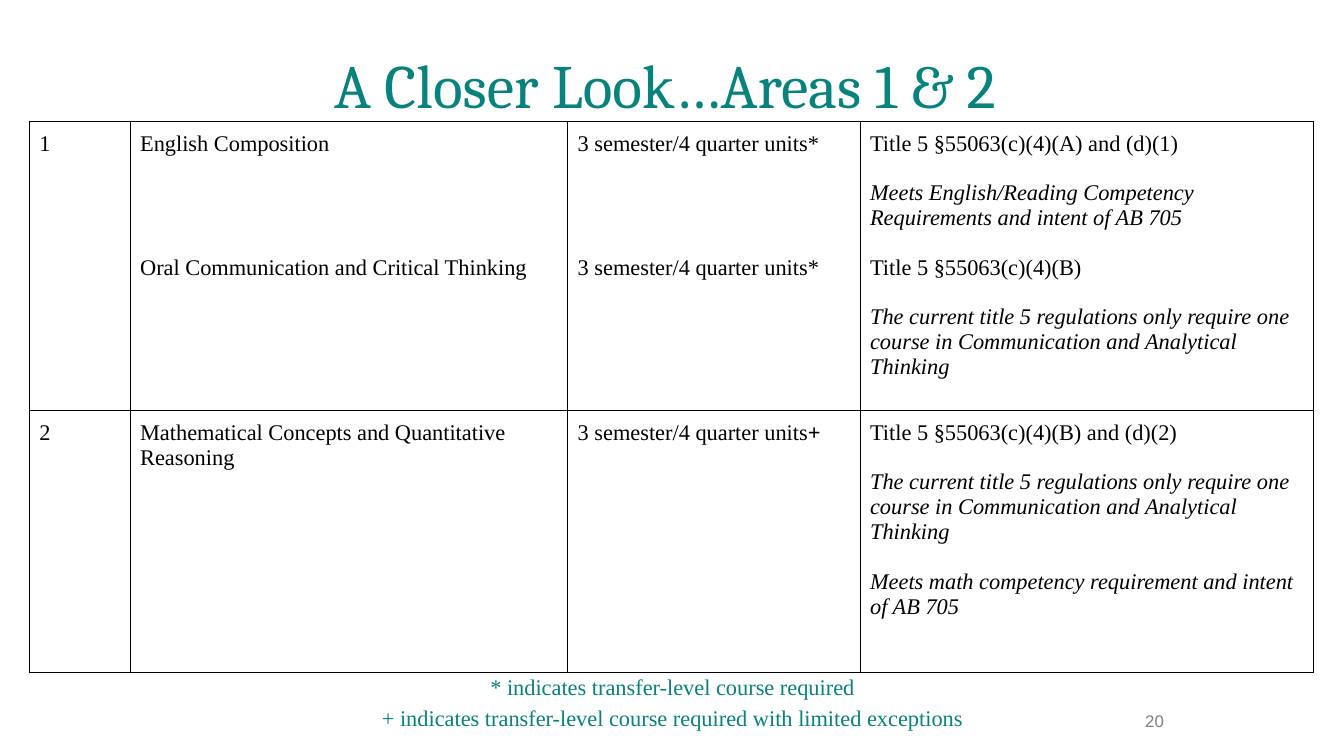
from dataclasses import dataclass

from lxml import etree
from pptx import Presentation
from pptx.dml.color import RGBColor
from pptx.enum.text import MSO_ANCHOR, MSO_AUTO_SIZE, PP_ALIGN
from pptx.oxml.ns import qn
from pptx.util import Inches, Pt

LEFT, CENTER = PP_ALIGN.LEFT, PP_ALIGN.CENTER
TOP, MIDDLE = MSO_ANCHOR.TOP, MSO_ANCHOR.MIDDLE
NO_FIT = MSO_AUTO_SIZE.NONE


@dataclass(frozen=True)
class Theme:
    teal: str = "07827C"
    black: str = "000000"
    gray: str = "7F7F7F"
    head: str = "Cambria"
    body: str = "Times New Roman"
    page: str = "Arial"
    head_size: int = 44
    body_size: int = 16
    page_size: int = 12
    gap: float = 17.7  # height of one body line
    rule: float = 0.75


THEME = Theme()

# Each cell lists paragraphs: (lines skipped before, runs of (text, style))
UNITS = "3 semester/4 quarter units"
RULES = ("The current title 5 regulations only require one course in "
         "Communication and Analytical Thinking")
AREAS = [
    [
        [(0, [("1", "")])],
        [(0, [("English Composition", "")]),
         (4, [("Oral Communication and Critical Thinking", "")])],
        [(0, [(UNITS + "*", "")]), (4, [(UNITS + "*", "")])],
        [(0, [("Title 5 §55063(c)(4)(A) and (d)(1)", "")]),
         (1, [("Meets English/Reading Competency Requirements "
               "and intent of AB 705", "i")]),
         (1, [("Title 5 §55063(c)(4)(B)", "")]),
         (1, [(RULES, "i")])],
    ],
    [
        [(0, [("2", "")])],
        [(0, [("Mathematical Concepts and Quantitative Reasoning", "")])],
        [(0, [(UNITS, ""), ("+", "b")])],
        [(0, [("Title 5 §55063(c)(4)(B) and (d)(2)", "")]),
         (1, [(RULES, "i")]),
         (1, [("Meets math competency requirement and intent of AB 705",
               "i")])],
    ],
]
NOTES = [
    "* indicates transfer-level course required",
    "+ indicates transfer-level course required with limited exceptions",
]


def write(frame, paras, font=THEME.body, size=THEME.body_size,
          color=THEME.black, align=LEFT, line=1.0):
    frame.word_wrap = True
    for n, (skip, runs) in enumerate(paras):
        para = frame.add_paragraph() if n else frame.paragraphs[0]
        para.alignment = align
        para.line_spacing = line
        para.space_before = Pt(skip * THEME.gap)
        for text, style in runs:
            run = para.add_run()
            run.text = text
            run.font.name = font
            run.font.size = Pt(size)
            run.font.color.rgb = RGBColor.from_string(color)
            run.font.bold = "b" in style
            run.font.italic = "i" in style


def inset(part, side, edge):
    """Set the inner margins of a text frame or a table cell."""
    part.margin_left = part.margin_right = Inches(side)
    part.margin_top = part.margin_bottom = Inches(edge)


def place(shape, box):
    shape.left, shape.top, shape.width, shape.height = map(Inches, box)


def border(cell):
    props = cell._tc.get_or_add_tcPr()
    for n, side in enumerate(("lnL", "lnR", "lnT", "lnB")):
        line = etree.Element(qn("a:" + side), w=str(Pt(THEME.rule)))
        fill = etree.SubElement(line, qn("a:solidFill"))
        etree.SubElement(fill, qn("a:srgbClr"), val=THEME.black)
        props.insert(n, line)


def add_title(slide, box):
    title = slide.shapes.title
    place(title, box)
    frame = title.text_frame
    frame.auto_size = NO_FIT
    frame.vertical_anchor = MIDDLE
    inset(frame, 0.1, 0.05)
    write(frame, [(0, [("A Closer Look…Areas 1 & 2 ", "")])],
          font=THEME.head, size=THEME.head_size, color=THEME.teal,
          align=CENTER, line=0.9)


def add_areas(slide, box):
    shape = slide.shapes.add_table(len(AREAS), len(AREAS[0]),
                                   *map(Inches, box))
    table = shape.table
    table.first_row = table.horz_banding = False
    for col, width in zip(table.columns, (1, 4.34, 2.9, 4.5)):
        col.width = Inches(width)
    for row, height in zip(table.rows, (2.87, 2.6)):
        row.height = Inches(height)
    for row, area in zip(table.rows, AREAS):
        for cell, paras in zip(row.cells, area):
            cell.fill.background()
            cell.vertical_anchor = TOP
            inset(cell, 0.1, 0.1)
            border(cell)
            write(cell.text_frame, paras)


def add_notes(slide, box):
    frame = slide.shapes.add_textbox(*map(Inches, box)).text_frame
    inset(frame, 0.1, 0.1)
    write(frame, [(0, [(note, "")]) for note in NOTES],
          color=THEME.teal, align=CENTER, line=1.15)


def add_page(slide, box):
    frame = slide.shapes.add_textbox(*map(Inches, box)).text_frame
    frame.vertical_anchor = MIDDLE
    inset(frame, 0.1, 0.05)
    write(frame, [(0, [("20", "")])], font=THEME.page,
          size=THEME.page_size, color=THEME.gray)


def main():
    deck = Presentation()
    deck.slide_width, deck.slide_height = Inches(13.33), Inches(7.5)
    slide = deck.slides.add_slide(deck.slide_layouts[5])
    add_title(slide, (1.17, 0.15, 10.99, 1.45))
    add_page(slide, (11.26, 6.95, 1.15, 0.4))
    add_notes(slide, (2.41, 6.54, 8.52, 0.82))
    add_areas(slide, (0.29, 1.2, 12.74, 5.47))
    deck.save("out.pptx")


if __name__ == "__main__":
    main()
